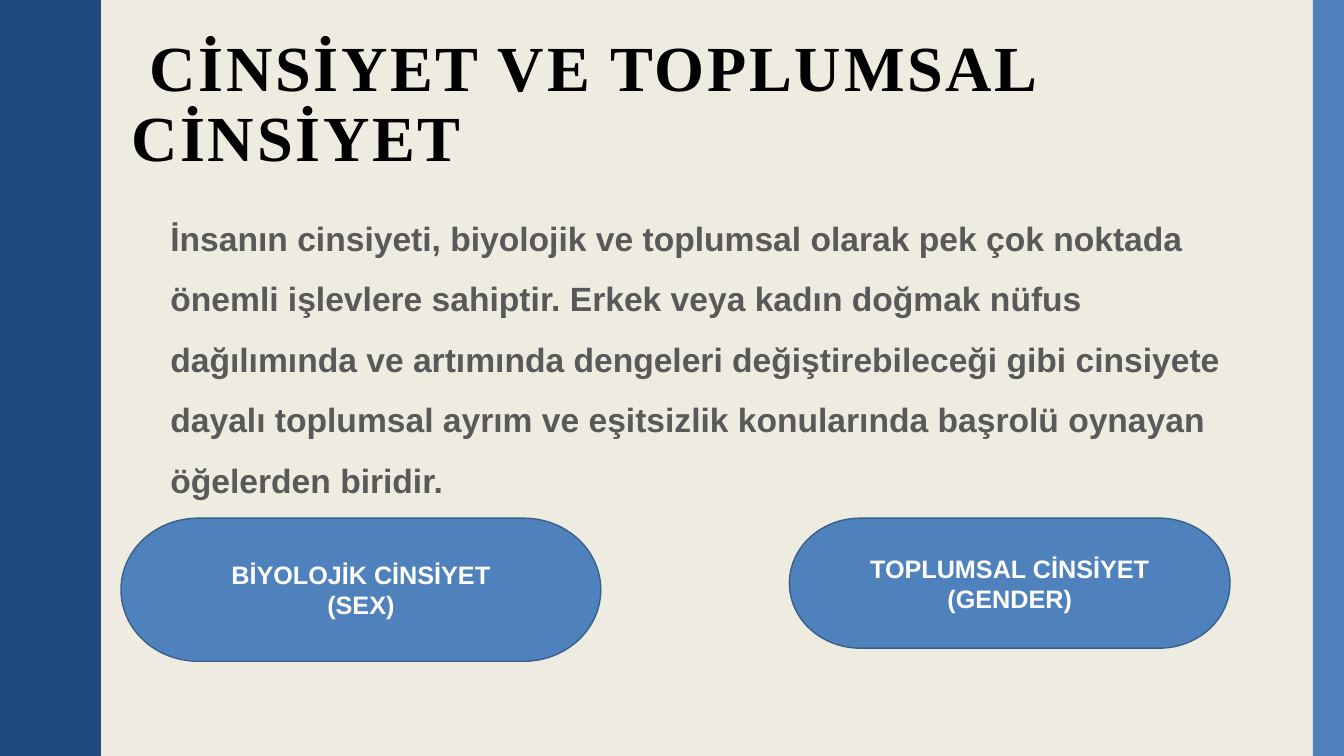
from pptx import Presentation, util as u
from pptx.dml.color import RGBColor
from pptx.enum import shapes, text

W, H = 13.33, 7.5
NAVY, BLUE, EDGE, CREAM = "1F497D", "4F81BD", "3A5F8C", "EEECE1"


def color(hex_string):
    return RGBColor.from_string(hex_string)


def add_run(p, words, size, font, hex_string):
    r = p.add_run()
    r.text = words
    r.font.size, r.font.name, r.font.bold = u.Pt(size), font, True
    r.font.color.rgb = color(hex_string)
    return r


prs = Presentation()
prs.slide_width, prs.slide_height = u.Inches(W), u.Inches(H)
s = prs.slides.add_slide(prs.slide_layouts[1])
s.background.fill.solid()
s.background.fill.fore_color.rgb = color(CREAM)

# Wavy left band: half a wave, mirrored, five times down the slide
half = [(0.78, 0), (0.78, 0.07), (0.79, 0.14), (0.8, 0.2), (0.81, 0.25),
        (0.83, 0.29), (0.85, 0.33), (0.87, 0.38), (0.89, 0.42), (0.91, 0.46),
        (0.93, 0.5), (0.95, 0.55), (0.96, 0.61), (0.97, 0.68), (0.97, 0.75)]
period = H / 5
wave = half + [(x, period - y) for x, y in reversed(half[:-1])]
edge = [(x, y + i * period) for i in range(5) for x, y in wave]
fb = s.shapes.build_freeform(0, 0, scale=u.Inches(1))
fb.add_line_segments(edge + [(0, H)], close=True)
band = fb.convert_to_shape()

# Right band
stripe = s.shapes.add_shape(shapes.MSO_SHAPE.RECTANGLE, u.Inches(W - 0.31), 0,
                            u.Inches(0.31), u.Inches(H))
for sp, fill in ((band, NAVY), (stripe, BLUE)):
    sp.shadow.inherit = False
    sp.fill.solid()
    sp.fill.fore_color.rgb = color(fill)
    sp.line.fill.background()

# Title and body placeholders
title, body = s.shapes.title, s.placeholders[1]
for sp, box in ((title, (1.2, 0.31, 11, 1.03)), (body, (1.37, 1.91, 11.13, 4.52))):
    sp.left, sp.top, sp.width, sp.height = [u.Inches(v) for v in box]
    tf = sp.text_frame
    tf.word_wrap, tf.auto_size = True, text.MSO_AUTO_SIZE.NONE
    tf.vertical_anchor = text.MSO_ANCHOR.TOP

p = title.text_frame.paragraphs[0]
p.alignment, p.line_spacing = text.PP_ALIGN.LEFT, 0.9
p._p.get_or_add_pPr().set("indent", str(u.Inches(0.18)))
r = add_run(p, "CİNSİYET VE TOPLUMSAL CİNSİYET", 45.9, "Times New Roman", "000000")
r._r.get_or_add_rPr().set("spc", "200")

p = body.text_frame.paragraphs[0]
pPr = p._p.get_or_add_pPr()
pPr.set("marL", str(u.Inches(0.22)))
pPr.set("indent", "0")
pPr.get_or_add_lnSpc()
pPr.append(pPr.makeelement(
    "{http://schemas.openxmlformats.org/drawingml/2006/main}buNone", {}))
p.line_spacing, p.space_before = 1.5, u.Pt(0)
add_run(p, "İnsanın cinsiyeti, biyolojik ve toplumsal olarak pek çok noktada "
           "önemli işlevlere sahiptir. Erkek veya kadın doğmak nüfus dağılımında "
           "ve artımında dengeleri değiştirebileceği gibi cinsiyete dayalı "
           "toplumsal ayrım ve eşitsizlik konularında başrolü oynayan öğelerden "
           "biridir.", 24, "Arial", "595959")

# Two concept boxes
concepts = [(1.2, 4.76, 1.42, ("BİYOLOJİK CİNSİYET", "(SEX)")),
            (7.83, 4.37, 1.29, ("TOPLUMSAL CİNSİYET", "(GENDER)"))]
for left, width, height, lines in concepts:
    sp = s.shapes.add_shape(shapes.MSO_SHAPE.FLOWCHART_TERMINATOR, u.Inches(left),
                            u.Inches(5.14), u.Inches(width), u.Inches(height))
    sp.shadow.inherit = False
    sp.fill.solid()
    sp.fill.fore_color.rgb = color(BLUE)
    sp.line.color.rgb, sp.line.width = color(EDGE), u.Pt(1)
    tf = sp.text_frame
    tf.word_wrap, tf.vertical_anchor = True, text.MSO_ANCHOR.MIDDLE
    for i, line in enumerate(lines):
        p = tf.add_paragraph() if i else tf.paragraphs[0]
        p.alignment = text.PP_ALIGN.CENTER
        add_run(p, line, 18, "Arial", "FFFFFF")

prs.save("out.pptx")
